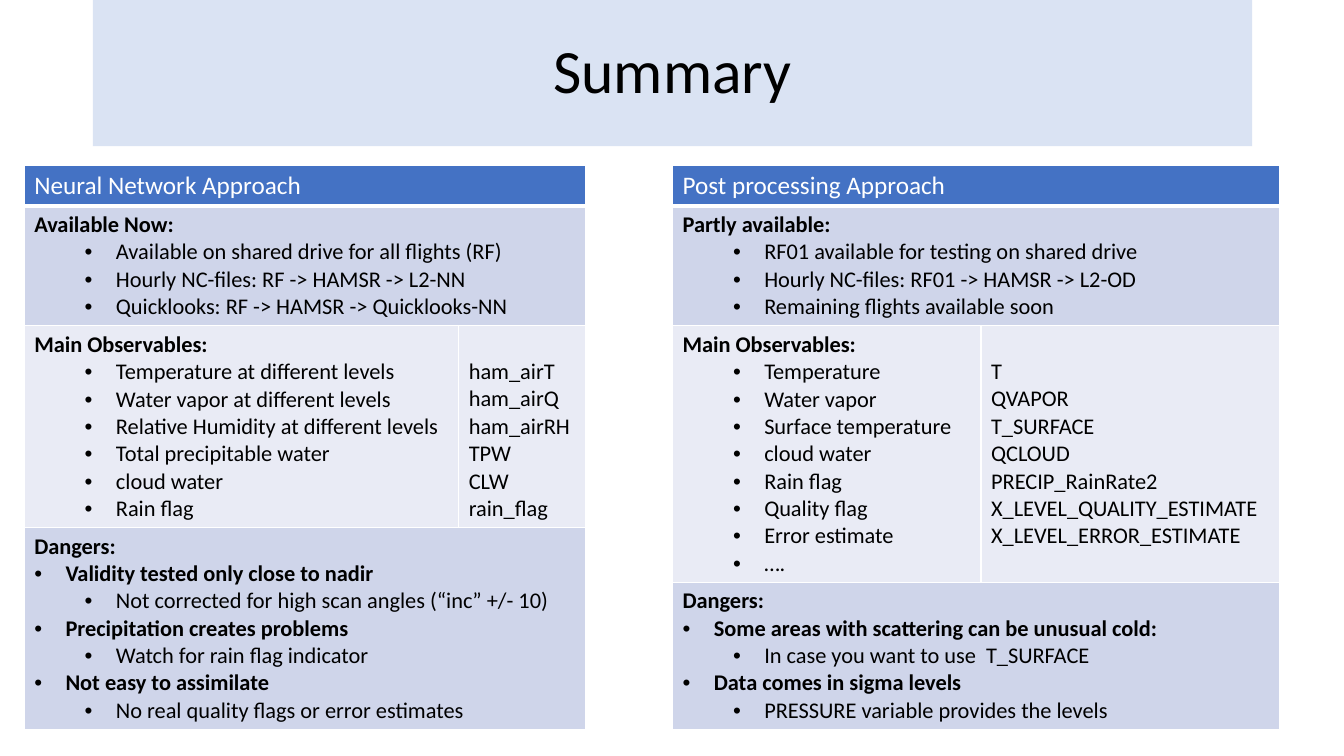
from pptx import Presentation
from pptx.dml.color import RGBColor
from pptx.enum.text import MSO_ANCHOR, PP_ALIGN
from pptx.oxml import parse_xml
from pptx.oxml.ns import nsdecls
from pptx.util import Inches, Pt


def paint(target, color):
    target.solid()
    target.fore_color.rgb = RGBColor.from_string(color)


def write(frame, text, size=16, color="000000", bold=False, bullet_indent=None):
    """Add a paragraph, using the first one while it is still empty."""
    paragraph = frame.paragraphs[0]
    if paragraph.text:
        paragraph = frame.add_paragraph()
    run = paragraph.add_run()
    run.text = text
    run.font.name = "Calibri"
    run.font.size = Pt(size)
    run.font.bold = bold
    paint(run.font.fill, color)
    if bullet_indent is not None:
        properties = paragraph._p.get_or_add_pPr()
        properties.set("marL", str(Inches(bullet_indent)))
        properties.set("indent", str(Inches(-0.31)))
        properties.append(parse_xml(f'<a:buFont {nsdecls("a")} typeface="Arial"/>'))
        properties.append(parse_xml(f'<a:buChar {nsdecls("a")} char="•"/>'))
    return paragraph


# Content: each approach has its sections as (style, text) lines
approaches = [
    {
        "name": "Neural Network Approach",
        "left": 0.24,
        "columns": [4.31, 1.26],
        "availability": [
            ("heading", "Available Now:"),
            ("detail", "Available on shared drive for all flights (RF)"),
            ("detail", "Hourly NC-files: RF -> HAMSR -> L2-NN"),
            ("detail", "Quicklooks: RF -> HAMSR -> Quicklooks-NN"),
        ],
        "observables": [
            ("heading", "Main Observables:"),
            ("detail", "Temperature at different levels"),
            ("detail", "Water vapor at different levels"),
            ("detail", "Relative Humidity at different levels"),
            ("detail", "Total precipitable water"),
            ("detail", "cloud water"),
            ("detail", "Rain flag"),
        ],
        "variables": ["ham_airT", "ham_airQ", "ham_airRH", "TPW", "CLW", "rain_flag"],
        "dangers": [
            ("heading", "Dangers:"),
            ("point", "Validity tested only close to nadir"),
            ("detail", "Not corrected for high scan angles (“inc” +/- 10)"),
            ("point", "Precipitation creates problems"),
            ("detail", "Watch for rain flag indicator"),
            ("point", "Not easy to assimilate"),
            ("detail", "No real quality flags or error estimates"),
        ],
    },
    {
        "name": "Post processing Approach",
        "left": 6.67,
        "columns": [3.06, 2.96],
        "availability": [
            ("heading", "Partly available:"),
            ("detail", "RF01 available for testing on shared drive"),
            ("detail", "Hourly NC-files: RF01 -> HAMSR -> L2-OD"),
            ("detail", "Remaining flights available soon"),
        ],
        "observables": [
            ("heading", "Main Observables:"),
            ("detail", "Temperature"),
            ("detail", "Water vapor"),
            ("detail", "Surface temperature"),
            ("detail", "cloud water"),
            ("detail", "Rain flag"),
            ("detail", "Quality flag"),
            ("detail", "Error estimate"),
            ("detail", "…."),
        ],
        "variables": ["T", "QVAPOR", "T_SURFACE", "QCLOUD", "PRECIP_RainRate2",
                      "X_LEVEL_QUALITY_ESTIMATE", "X_LEVEL_ERROR_ESTIMATE"],
        "dangers": [
            ("heading", "Dangers:"),
            ("point", "Some areas with scattering can be unusual cold:"),
            ("detail", "In case you want to use  T_SURFACE"),
            ("point", "Data comes in sigma levels"),
            ("detail", "PRESSURE variable provides the levels"),
        ],
    },
]
line_styles = {
    "heading": {"bold": True},
    "point": {"bold": True, "bullet_indent": 0.31},
    "detail": {"bullet_indent": 0.81},
}
row_fills = ["4472C4", "CFD5EA", "E9EBF5", "CFD5EA"]
line_height = Pt(19.5)

presentation = Presentation()
presentation.slide_width = Inches(13.33)
presentation.slide_height = Inches(7.5)
slide = presentation.slides.add_slide(presentation.slide_layouts[5])

# Title band
title = slide.shapes.title
title.left, title.top = Inches(0.92), Inches(0)
title.width, title.height = Inches(11.5), Inches(1.45)
paint(title.fill, "DAE3F3")
title.text_frame.vertical_anchor = MSO_ANCHOR.MIDDLE
heading = write(title.text_frame, "Summary", size=44)
heading.alignment = PP_ALIGN.CENTER
heading.line_spacing = 0.9

# One table per approach
for approach in approaches:
    sections = [approach[key] for key in ("availability", "observables", "dangers")]
    heights = [Inches(0.4)]
    heights += [Inches(0.1) + len(lines) * line_height for lines in sections]
    table = slide.shapes.add_table(
        4, 2, Inches(approach["left"]), Inches(1.64),
        Inches(sum(approach["columns"])), sum(heights)).table
    for column, width in zip(table.columns, approach["columns"]):
        column.width = Inches(width)

    # Row heights, fills and white borders
    for index, (row, height, fill) in enumerate(zip(table.rows, heights, row_fills)):
        row.height = height
        for cell in row.cells:
            for side in "LRTB":
                thick = (index, side) in ((0, "B"), (1, "T"))
                cell._tc.get_or_add_tcPr().append(parse_xml(
                    f'<a:ln{side} {nsdecls("a")} w="{Pt(3 if thick else 1)}"><a:solidFill>'
                    f'<a:srgbClr val="FFFFFF"/></a:solidFill></a:ln{side}>'))
            paint(cell.fill, fill)
    for index in (0, 1, 3):
        table.cell(index, 0).merge(table.cell(index, 1))

    # Header and sections
    write(table.cell(0, 0).text_frame, approach["name"], size=18, color="FFFFFF")
    for index, lines in enumerate(sections, start=1):
        for style, text in lines:
            write(table.cell(index, 0).text_frame, text, **line_styles[style])

    # Variable names start one line down, level with the first observable
    variables = table.cell(2, 1)
    variables.margin_top = Inches(0.05) + line_height
    for variable in approach["variables"]:
        write(variables.text_frame, variable)

presentation.save("out.pptx")
